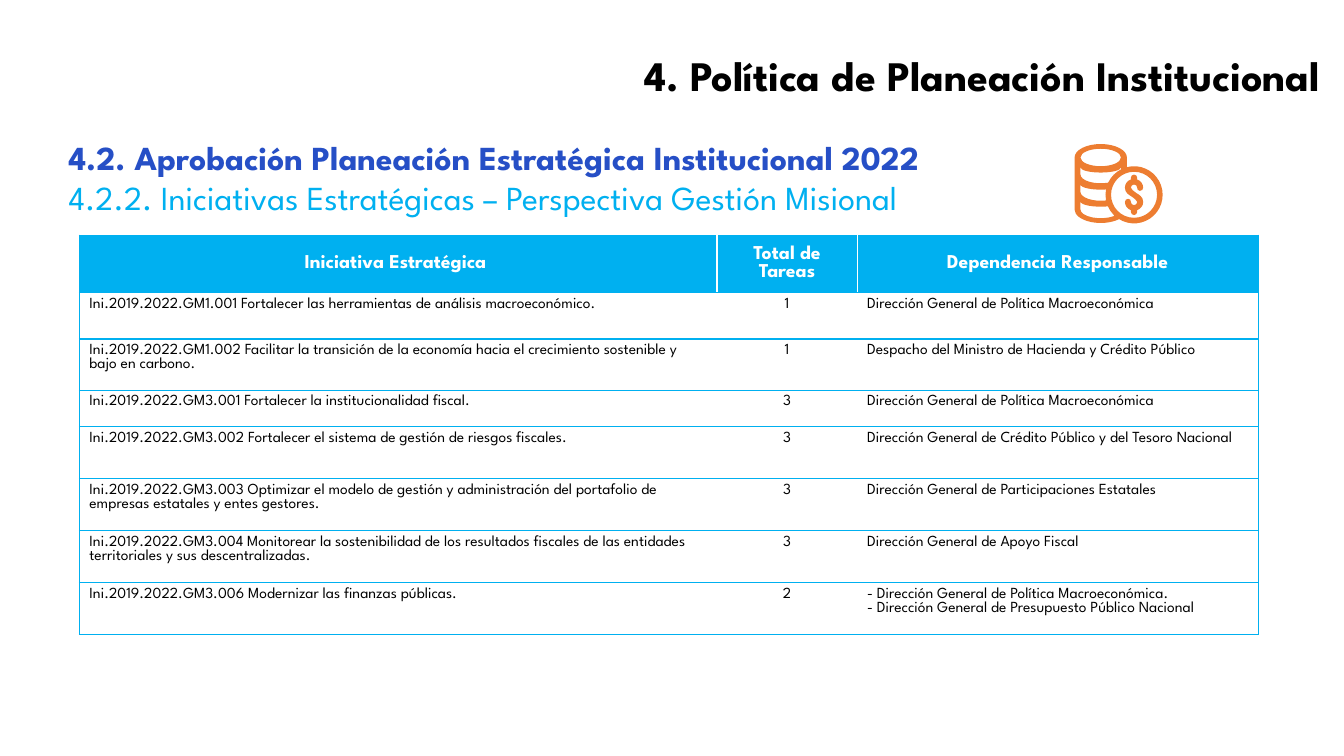
from dataclasses import dataclass
from itertools import chain
from math import ceil, cos, radians, sin, tan

from lxml.etree import SubElement
from pptx import Presentation
from pptx.dml.color import RGBColor
from pptx.enum.text import MSO_ANCHOR, MSO_AUTO_SIZE, PP_ALIGN
from pptx.oxml.ns import qn
from pptx.shapes.group import GroupShape
from pptx.slide import Slide
from pptx.table import _Cell
from pptx.text.text import TextFrame
from pptx.util import Cm, Pt

Point = tuple[float, float]
Segment = tuple[Point, ...]
Contour = list[Segment]


@dataclass(frozen=True)
class Theme:
    font: str = "League Spartan"
    black: str = "000000"
    white: str = "FFFFFF"
    blue: str = "264FC6"
    cyan: str = "00B0F0"
    orange: str = "ED7D31"
    title_size: float = 30
    subtitle_size: float = 24
    header_size: float = 14
    body_size: float = 11
    title_leading: float = 36
    subtitle_leading: float = 28.6
    border_width: float = 1


THEME = Theme()


@dataclass(frozen=True)
class Line:
    text: str
    size: float
    color: str
    bold: bool = False
    align: PP_ALIGN = PP_ALIGN.LEFT
    leading: float | None = None


@dataclass(frozen=True)
class Heading:
    left: float
    top: float
    width: float
    height: float
    lines: tuple[Line, ...]


@dataclass(frozen=True)
class Initiative:
    name: str
    tasks: int
    offices: tuple[str, ...]
    height: float = 1.31


@dataclass(frozen=True)
class Column:
    header: str
    width: float
    align: PP_ALIGN
    left_border: str
    right_border: str


@dataclass(frozen=True)
class CoinBand:
    upper_end: float
    coin_start: float
    coin_end: float
    lower_start: float


SUBTITLE = Heading(1.48, 3.33, 32.39, 2.31, (
    Line("4.2. Aprobación Planeación Estratégica Institucional 2022",
         THEME.subtitle_size, THEME.blue, True, leading=THEME.subtitle_leading),
    Line("4.2.2. Iniciativas Estratégicas – Perspectiva Gestión Misional",
         THEME.subtitle_size, THEME.cyan, leading=THEME.subtitle_leading),
))
TITLE = Heading(9.73, 1.12, 23.8, 1.55, (
    Line("4. Política de Planeación Institucional", THEME.title_size,
         THEME.black, True, PP_ALIGN.RIGHT, THEME.title_leading),
))

COLUMNS = (
    Column("Iniciativa Estratégica ", 16.07, PP_ALIGN.LEFT, THEME.cyan, THEME.white),
    Column("Total de Tareas", 3.53, PP_ALIGN.CENTER, THEME.white, THEME.white),
    Column("Dependencia Responsable", 10.11, PP_ALIGN.LEFT, THEME.white, THEME.cyan),
)

INITIATIVES = (
    Initiative("Ini.2019.2022.GM1.001 Fortalecer las herramientas de análisis macroeconómico.",
               1, ("Dirección General de Política Macroeconómica",), 1.17),
    Initiative("Ini.2019.2022.GM1.002 Facilitar la transición de la economía hacia el "
               "crecimiento sostenible y bajo en carbono.",
               1, ("Despacho del Ministro de Hacienda y Crédito Público",), 1.29),
    Initiative("Ini.2019.2022.GM3.001 Fortalecer la institucionalidad fiscal.",
               3, ("Dirección General de Política Macroeconómica",), 0.91),
    Initiative("Ini.2019.2022.GM3.002 Fortalecer el sistema de gestión de riesgos fiscales.",
               3, ("Dirección General de Crédito Público y del Tesoro Nacional",)),
    Initiative("Ini.2019.2022.GM3.003 Optimizar el modelo de gestión y administración del "
               "portafolio de empresas estatales y entes gestores.",
               3, ("Dirección General de Participaciones Estatales",)),
    Initiative("Ini.2019.2022.GM3.004 Monitorear la sostenibilidad de los resultados fiscales "
               "de las entidades territoriales y sus descentralizadas.",
               3, ("Dirección General de Apoyo Fiscal",)),
    Initiative("Ini.2019.2022.GM3.006 Modernizar las finanzas públicas.",
               2, ("- Dirección General de Política Macroeconómica.",
                   "- Dirección General de Presupuesto Público Nacional")),
)
HEADER_HEIGHT = 1.42

STACK_X = 27.74
COIN_X, COIN_Y, COIN_RADIUS = 28.58, 4.91, 0.72
BANDS = (
    CoinBand(0, 243, 206, 70),
    CoinBand(75, 191, 169, 75),
    CoinBand(70, 158, 134, 50),
)


def write_lines(frame: TextFrame, lines: tuple[Line, ...]) -> None:
    for index, line in enumerate(lines):
        paragraph = frame.add_paragraph() if index else frame.paragraphs[0]
        paragraph.alignment = line.align
        if line.leading:
            paragraph.line_spacing = Pt(line.leading)
        run = paragraph.add_run()
        run.text = line.text
        run.font.name = THEME.font
        run.font.size = Pt(line.size)
        run.font.bold = line.bold
        run.font.color.rgb = RGBColor.from_string(line.color)


def draw_heading(slide: Slide, heading: Heading) -> None:
    box = slide.shapes.add_textbox(Cm(heading.left), Cm(heading.top),
                                   Cm(heading.width), Cm(heading.height))
    box.text_frame.word_wrap = True
    box.text_frame.auto_size = MSO_AUTO_SIZE.SHAPE_TO_FIT_TEXT
    write_lines(box.text_frame, heading.lines)


def fill_cell(cell: _Cell, column: Column, lines: tuple[Line, ...], fill: str) -> None:
    write_lines(cell.text_frame, lines)
    cell.fill.solid()
    cell.fill.fore_color.rgb = RGBColor.from_string(fill)
    properties = cell._tc.get_or_add_tcPr()
    borders = {"a:lnL": column.left_border, "a:lnR": column.right_border,
               "a:lnT": THEME.cyan, "a:lnB": THEME.cyan}
    for position, (side, color) in enumerate(borders.items()):
        border = SubElement(properties, qn(side), w=str(Pt(THEME.border_width)))
        SubElement(SubElement(border, qn("a:solidFill")), qn("a:srgbClr"), val=color)
        properties.insert(position, border)


def draw_initiatives(slide: Slide) -> None:
    heights = [HEADER_HEIGHT, *(initiative.height for initiative in INITIATIVES)]
    table = slide.shapes.add_table(
        len(heights), len(COLUMNS), Cm(2), Cm(5.93),
        Cm(sum(column.width for column in COLUMNS)), Cm(sum(heights))).table
    for row, height in zip(table.rows, heights):
        row.height = Cm(height)
    for col, column in enumerate(COLUMNS):
        table.columns[col].width = Cm(column.width)
        header = table.cell(0, col)
        header.vertical_anchor = MSO_ANCHOR.MIDDLE
        fill_cell(header, column, (Line(column.header, THEME.header_size, THEME.white,
                                        True, PP_ALIGN.CENTER),), THEME.cyan)
        for row, initiative in enumerate(INITIATIVES, 1):
            texts = ((initiative.name,), (str(initiative.tasks),), initiative.offices)[col]
            lines = tuple(Line(text, THEME.body_size, THEME.black, align=column.align)
                          for text in texts)
            fill_cell(table.cell(row, col), column, lines, THEME.white)


def arc(x: float, y: float, rx: float, ry: float, start: float, end: float) -> Contour:
    def at(angle: float, pull: float = 0) -> Point:
        return (x + rx * (cos(angle) - pull * sin(angle)),
                y + ry * (sin(angle) + pull * cos(angle)))

    count = ceil(abs(end - start) / 90)
    turn = radians(end - start) / count
    pull = 4 / 3 * tan(turn / 4)
    angles = [radians(start) + turn * step for step in range(count + 1)]
    return [(at(angles[0]),), *((at(a, pull), at(b, -pull), at(b))
                                for a, b in zip(angles, angles[1:]))]


def coin_edge(start: float, end: float) -> Contour:
    return arc(COIN_X, COIN_Y, COIN_RADIUS, COIN_RADIUS, start, end)


def stack_contours() -> list[Contour]:
    outline = (arc(STACK_X, 3.97, 0.66, 0.34, 180, 360) + coin_edge(-104.5, 122.5)
               + arc(STACK_X, 5.28, 0.66, 0.34, 46, 180))
    bands = [arc(STACK_X, 4.22 + 0.43 * level, 0.51, 0.13, 180, band.upper_end)
             + coin_edge(band.coin_start, band.coin_end)
             + arc(STACK_X, 4.4 + 0.44 * level, 0.51, 0.22, band.lower_start, 180)
             for level, band in enumerate(BANDS)]
    return [outline, arc(STACK_X, 3.97, 0.51, 0.22, 0, 360),
            arc(COIN_X, COIN_Y, 0.58, 0.58, 0, 360), *bands]


def peso_contour() -> Contour:
    half = (arc(0, -0.43, 0.08, 0.08, 270, 180) + arc(0, -0.18, 0.23, 0.22, 250, 180)
            + [((-0.23, -0.05), (-0.13, 0), (-0.05, 0.05)),
               ((0, 0.1), (0.08, 0.13), (0.08, 0.18))]
            + arc(0, 0.18, 0.08, 0.08, 0, 180)[1:]
            + arc(-0.15, 0.18, 0.08, 0.08, 0, -180)[1:]
            + arc(0, 0.18, 0.23, 0.22, 180, 110)[1:] + arc(0, 0.43, 0.08, 0.08, 180, 90))
    return [tuple((COIN_X + side * x, COIN_Y + side * y) for x, y in segment)
            for side in (1, -1) for segment in half]


def draw_outline(icon: GroupShape, contours: list[Contour]) -> None:
    scaled = [[(Cm(x), Cm(y)) for x, y in chain(*contour)] for contour in contours]
    builder = icon.shapes.build_freeform(*scaled[0][0])
    builder.add_line_segments(scaled[0][1:])
    for points in scaled[1:]:
        builder.move_to(*points[0])
        builder.add_line_segments(points[1:])
    outline = builder.convert_to_shape()
    steps = iter(list(outline._element.iter(qn("a:lnTo"))))
    for segment in chain(*(contour[1:] for contour in contours)):
        first, *others = [next(steps) for _ in segment]
        if others:
            first.tag = qn("a:cubicBezTo")
            for step in others:
                first.append(step[0])
                step.getparent().remove(step)
    outline.shadow.inherit = False
    outline.fill.solid()
    outline.fill.fore_color.rgb = RGBColor.from_string(THEME.orange)
    outline.line.fill.background()


def main() -> None:
    presentation = Presentation()
    presentation.slide_width, presentation.slide_height = Cm(33.87), Cm(19.05)
    slide = presentation.slides.add_slide(presentation.slide_layouts[6])
    draw_heading(slide, SUBTITLE)
    draw_initiatives(slide)
    icon = slide.shapes.add_group_shape()
    draw_outline(icon, stack_contours())
    draw_outline(icon, [peso_contour()])
    draw_heading(slide, TITLE)
    presentation.save("out.pptx")


if __name__ == "__main__":
    main()
